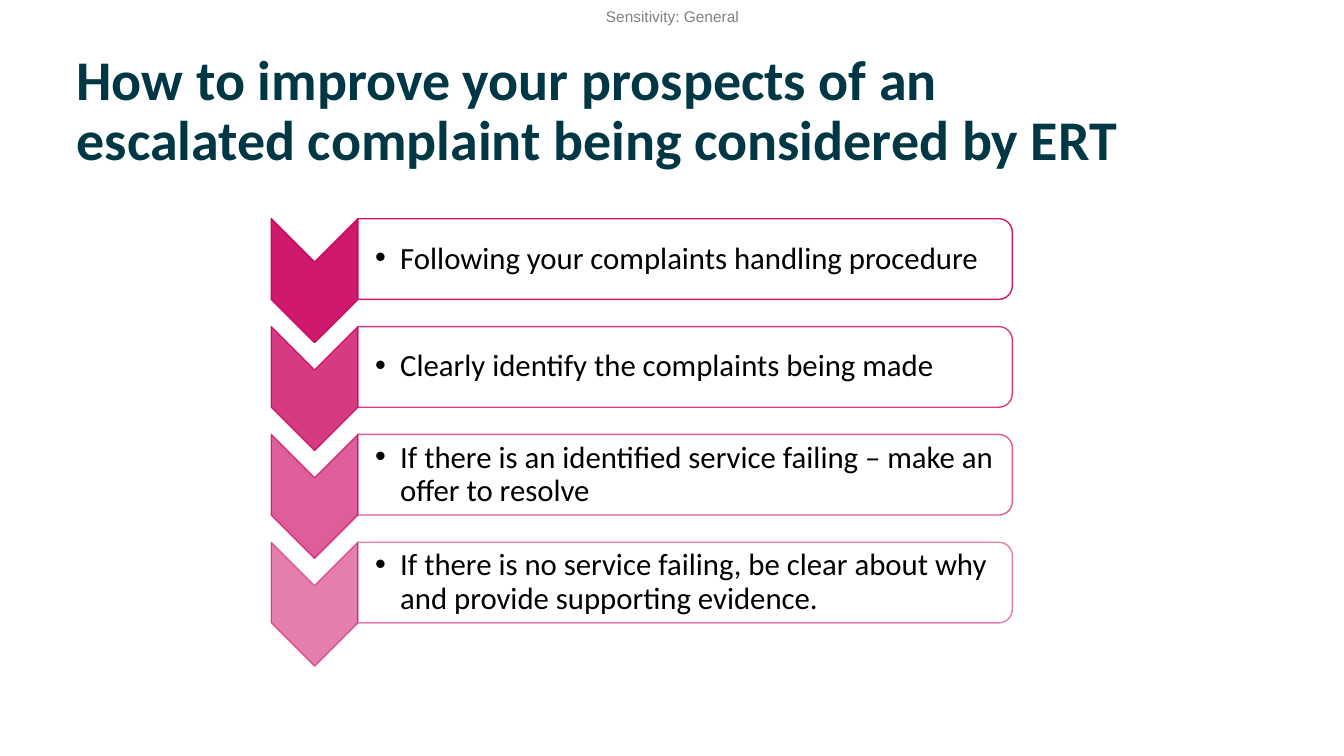
from lxml import etree
from pptx import Presentation
from pptx.dml.color import RGBColor
from pptx.enum.shapes import MSO_SHAPE
from pptx.enum.text import MSO_ANCHOR, MSO_AUTO_SIZE, PP_ALIGN
from pptx.oxml.ns import qn
from pptx.util import Inches, Pt

CHEVRON = MSO_SHAPE.CHEVRON
ROUNDED_BAR = MSO_SHAPE.ROUND_2_SAME_RECTANGLE
MIDDLE = MSO_ANCHOR.MIDDLE
NO_AUTOFIT = MSO_AUTO_SIZE.NONE
LEFT = PP_ALIGN.LEFT

PINK = "CA005D"
TEAL = "003745"
BLACK = "000000"
WHITE = "FFFFFF"

TITLE_LINES = [
    "How to improve your prospects of an",
    "escalated complaint being considered by ERT",
]
STEPS = [
    ("Following your complaints handling procedure", 90),
    ("Clearly identify the complaints being made", 77),
    ("If there is an identified service failing – make an offer to resolve", 63),
    ("If there is no service failing, be clear about why and provide supporting evidence.", 50),
]
STEP_PITCH = 1.07


def paint(color_format, color, opacity=100):
    color_format.rgb = RGBColor.from_string(color)
    if opacity < 100:
        element = color_format._xFill.find(qn("a:srgbClr"))
        alpha = etree.SubElement(element, qn("a:alpha"))
        alpha.set("val", str(opacity * 1000))


def add_span(para, text, size, font, color, bold=False, opacity=100):
    span = para.add_run()
    span.text = text
    span.font.size = Pt(size)
    span.font.name = font
    span.font.bold = bold
    span.font.fill.solid()
    paint(span.font.fill.fore_color, color, opacity)


def set_frame(frame, margins, anchor):
    frame.word_wrap = True
    frame.auto_size = NO_AUTOFIT
    frame.vertical_anchor = anchor
    left, top, right, bottom = margins
    frame.margin_left, frame.margin_top = Inches(left), Inches(top)
    frame.margin_right, frame.margin_bottom = Inches(right), Inches(bottom)


def add_text_box(page, box, margins, anchor=MSO_ANCHOR.TOP):
    text_box = page.shapes.add_textbox(*map(Inches, box))
    set_frame(text_box.text_frame, margins, anchor)
    return text_box.text_frame.paragraphs[0]


def add_turned_shape(page, kind, box, fill, fill_opacity, line_opacity):
    left, top, width, height = box
    shift = (width - height) / 2
    shape = page.shapes.add_shape(
        kind, Inches(left + shift), Inches(top - shift), Inches(height), Inches(width)
    )
    shape.rotation = 90
    shape.shadow.inherit = False
    shape.fill.solid()
    paint(shape.fill.fore_color, fill, fill_opacity)
    shape.line.width = Pt(1)
    shape.line.fill.solid()
    paint(shape.line.fill.fore_color, PINK, line_opacity)


def add_bullet(para, indent):
    properties = para._p.get_or_add_pPr()
    properties.set("marL", str(Inches(indent)))
    properties.set("indent", str(Inches(-indent)))
    font = etree.SubElement(properties, qn("a:buFont"))
    font.set("typeface", "Arial")
    bullet = etree.SubElement(properties, qn("a:buChar"))
    bullet.set("char", "•")


def add_sensitivity(page, box):
    para = add_text_box(page, box, (0, 0, 0, 0))
    add_span(para, "Sensitivity: General", 11, "Arial", BLACK, opacity=50)


def add_title(page, box):
    title = page.shapes.title
    title.left, title.top, title.width, title.height = map(Inches, box)
    frame = title.text_frame
    set_frame(frame, (0.1, 0.05, 0.1, 0.05), MIDDLE)
    for index, line in enumerate(TITLE_LINES):
        para = frame.add_paragraph() if index else frame.paragraphs[0]
        para.alignment = LEFT
        para.line_spacing = 0.9
        para.space_before = Pt(0)
        add_span(para, line, 40, "Calibri", TEAL, bold=True)


def add_step(page, box, text, opacity):
    left, top, width, height = box
    arrow_width = 0.86
    bar_left, bar_width, bar_height = left + arrow_width, width - arrow_width, 0.8
    add_turned_shape(page, CHEVRON, (left, top, arrow_width, height), PINK, opacity, opacity)
    add_turned_shape(
        page, ROUNDED_BAR, (bar_left, top, bar_width, bar_height), WHITE, 90, opacity
    )
    text_box = (bar_left, top + 0.04, bar_width - 0.03, bar_height - 0.08)
    para = add_text_box(page, text_box, (0.17, 0.02, 0.02, 0.02), MIDDLE)
    para.line_spacing = 0.9
    add_bullet(para, 0.25)
    add_span(para, text, 22, "Calibri", BLACK)


def add_steps(page, box):
    left, top, width, height = box
    step_height = height - STEP_PITCH * (len(STEPS) - 1)
    for index, (text, opacity) in enumerate(STEPS):
        step_box = (left, top + index * STEP_PITCH, width, step_height)
        add_step(page, step_box, text, opacity)


def main():
    deck = Presentation()
    deck.slide_width, deck.slide_height = Inches(13.33), Inches(7.5)
    page = deck.slides.add_slide(deck.slide_layouts.get_by_name("Title Only"))
    add_sensitivity(page, (6.01, 0.07, 1.36, 0.18))
    add_title(page, (0.66, 0.46, 12.55, 1.31))
    add_steps(page, (2.69, 2.17, 7.35, 4.44))
    deck.save("out.pptx")


if __name__ == "__main__":
    main()
